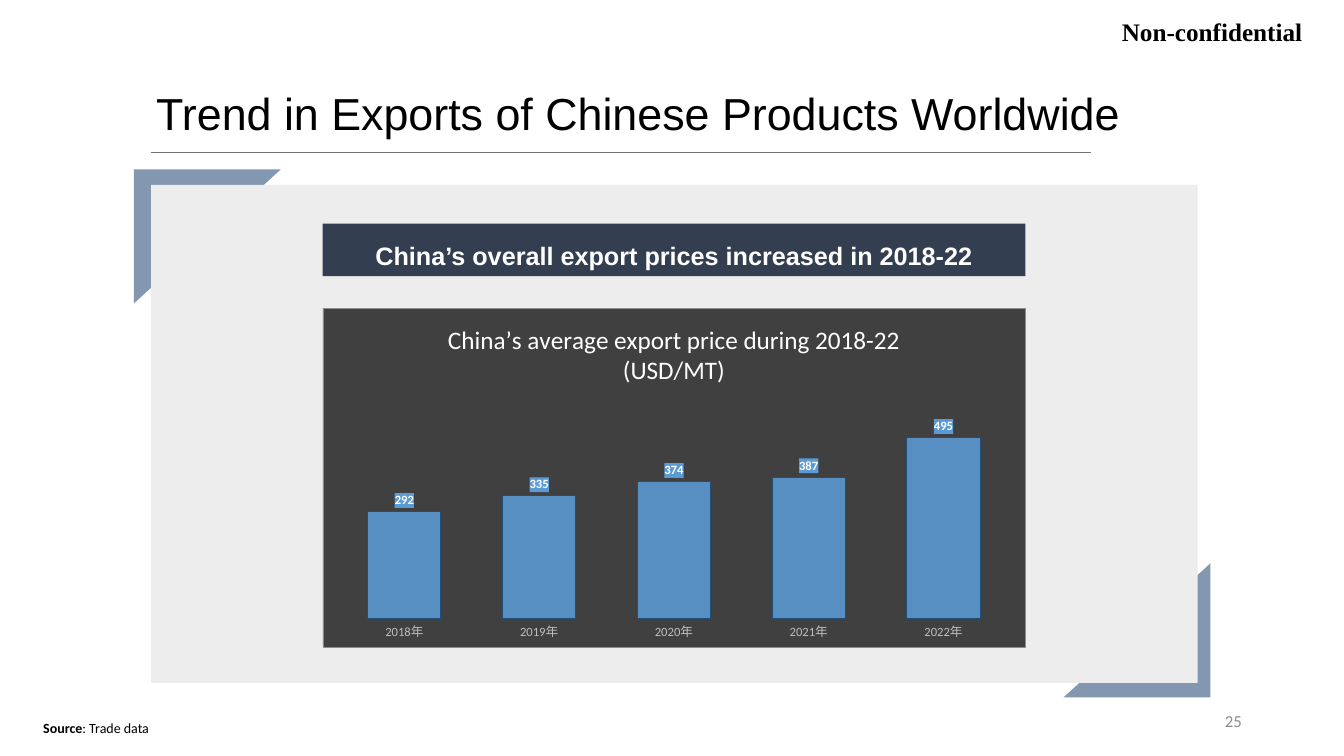
import pptx
import pptx.util
import pptx.chart.data
import pptx.dml.color
import pptx.enum.chart
import pptx.enum.shapes
import pptx.enum.text
import pptx.oxml
import pptx.oxml.ns
from lxml import etree

Pt = pptx.util.Pt
RGB = pptx.dml.color.RGBColor
Align = pptx.enum.text.PP_ALIGN
Anchor = pptx.enum.text.MSO_ANCHOR
Shape = pptx.enum.shapes.MSO_SHAPE
qn = pptx.oxml.ns.qn

BLACK = RGB(0x00, 0x00, 0x00)
WHITE = RGB(0xFF, 0xFF, 0xFF)
RULE = RGB(0x76, 0x71, 0x71)
FRAME = RGB(0x84, 0x97, 0xB0)
PANEL = RGB(0xED, 0xED, 0xED)
BANNER = RGB(0x33, 0x3F, 0x50)
CHART_BG = RGB(0x40, 0x40, 0x40)
GREY = RGB(0x8C, 0x8C, 0x8C)
AXIS_TEXT = RGB(0xBF, 0xBF, 0xBF)
BAR = RGB(0x5B, 0x9B, 0xD5)
BAR_LINE = RGB(0x1F, 0x4E, 0x79)


class SlideBuilder:
    """Holds the current slide and its style; all lengths are in points."""

    def __init__(self, prs):
        self.s = prs.slides.add_slide(prs.slide_layouts[5])

    def style(self, font, size, color, bold=False, name="Calibri"):
        font.name, font.size, font.bold = name, Pt(size), bold
        font.color.rgb = color

    def title(self, text, x, y, w, h, size, name):
        sp = self.s.shapes.title
        sp.left, sp.top, sp.width, sp.height = Pt(x), Pt(y), Pt(w), Pt(h)
        tf = sp.text_frame
        tf.text = text
        tf.auto_size = pptx.enum.text.MSO_AUTO_SIZE.NONE
        tf.vertical_anchor = Anchor.TOP
        p = tf.paragraphs[0]
        p.alignment = Align.LEFT
        self.style(p.font, size, BLACK, name=name)

    def text(self, text, x, y, w, h, size, color=BLACK, bold=False,
             name="Calibri", align=Align.LEFT, anchor=Anchor.TOP):
        sp = self.s.shapes.add_textbox(Pt(x), Pt(y), Pt(w), Pt(h))
        tf = sp.text_frame
        tf.word_wrap = True
        tf.vertical_anchor = anchor
        p = tf.paragraphs[0]
        p.alignment = align
        p.add_run().text = text
        self.style(p.font, size, color, bold, name)
        return p

    def shape(self, kind, x, y, w, h, fill, rotation=0):
        sp = self.s.shapes.add_shape(kind, Pt(x), Pt(y), Pt(w), Pt(h))
        sp.shadow.inherit = False
        sp.rotation = rotation
        sp.fill.solid()
        sp.fill.fore_color.rgb = fill
        sp.line.fill.background()

    def line(self, x1, y1, x2, y2, color, width):
        c = self.s.shapes.add_connector(
            pptx.enum.shapes.MSO_CONNECTOR.STRAIGHT, Pt(x1), Pt(y1), Pt(x2), Pt(y2))
        c.line.color.rgb = color
        c.line.width = Pt(width)
        etree.SubElement(c._element.spPr, qn("a:effectLst"))

    def column_chart(self, title_lines, cats, vals, x, y, w, h):
        data = pptx.chart.data.CategoryChartData()
        data.categories = cats
        data.add_series("Series 1", vals)
        chart = self.s.shapes.add_chart(
            pptx.enum.chart.XL_CHART_TYPE.COLUMN_CLUSTERED,
            Pt(x), Pt(y), Pt(w), Pt(h), data).chart
        self.style(chart.font, 10, BLACK)
        chart.has_legend = False

        # Chart title
        chart.has_title = True
        tf = chart.chart_title.text_frame
        tf.text = "\n".join(title_lines)
        for p in tf.paragraphs:
            self.style(p.font, 18, WHITE)
        chart.chart_title.include_in_layout = False

        # Axes
        cat, val = chart.category_axis, chart.value_axis
        cat.major_tick_mark = pptx.enum.chart.XL_TICK_MARK.NONE
        cat.format.line.fill.background()
        self.style(cat.tick_labels.font, 9, AXIS_TEXT)
        val.minimum_scale, val.maximum_scale = 0, 600
        val.has_major_gridlines = False
        val.visible = False

        # Columns and labels
        plot = chart.plots[0]
        plot.gap_width = 84
        plot.vary_by_categories = False
        fmt = plot.series[0].format
        fmt.fill.solid()
        fmt.fill.fore_color.rgb = BAR
        bar_color = fmt.fill._xPr.find(qn("a:solidFill"))[0]
        etree.SubElement(bar_color, qn("a:alpha")).set("val", "88000")
        fmt.line.color.rgb = BAR_LINE
        fmt.line.width = Pt(0.75)
        labels = plot.series[0].data_labels
        labels.show_value = True
        labels.position = pptx.enum.chart.XL_LABEL_POSITION.OUTSIDE_END
        self.style(labels.font, 9, WHITE, True)
        labels._element.find(qn("c:txPr")).addprevious(self.chart_box(BAR))

        # Plot position and chart background
        area = chart._chartSpace.chart.plotArea
        for old in area.findall(qn("c:layout")):
            area.remove(old)
        layout = etree.Element(qn("c:layout"))
        manual = etree.SubElement(layout, qn("c:manualLayout"))
        for tag, v in (("layoutTarget", "inner"), ("xMode", "edge"), ("yMode", "edge"),
                       ("x", "0.02"), ("y", "0.27"), ("w", "0.96"), ("h", "0.645")):
            etree.SubElement(manual, qn("c:" + tag)).set("val", v)
        area.insert(0, layout)
        chart._chartSpace.chart.addnext(self.chart_box(CHART_BG, GREY))

    def chart_box(self, fill, border=None):
        line = (f'<a:ln w="{Pt(0.5)}"><a:solidFill><a:srgbClr val="{border}"/>'
                '</a:solidFill></a:ln>') if border else ""
        return pptx.oxml.parse_xml(
            f'<c:spPr {pptx.oxml.ns.nsdecls("c", "a")}><a:solidFill>'
            f'<a:srgbClr val="{fill}"/></a:solidFill>{line}</c:spPr>')


def main():
    prs = pptx.Presentation()
    prs.slide_width, prs.slide_height = Pt(960), Pt(540)
    b = SlideBuilder(prs)

    # Heading
    b.title("Trend in Exports of Chinese Products Worldwide",
            104.4, 57.6, 714.2, 46, 32, "Arial")
    b.line(108, 108.9, 779, 108.9, RULE, 0.5)
    b.text("Non-confidential", 794.2, 8, 155.5, 29, 18, bold=True,
           name="Times New Roman")

    # Panel with corner frames
    b.shape(Shape.HALF_FRAME, 95.6, 121, 105, 95.8, FRAME)
    b.shape(Shape.HALF_FRAME, 759.6, 402.4, 105, 95.8, FRAME, 180)
    b.shape(Shape.RECTANGLE, 108, 132, 747.4, 355.8, PANEL)

    # Banner
    b.shape(Shape.RECTANGLE, 230.4, 159.8, 502, 37.4, BANNER)
    b.text("China’s overall export prices increased in 2018-22",
           230.4, 167.8, 502, 29, 18, WHITE, True, "Arial", Align.CENTER)

    # Price chart
    b.column_chart(["China’s average export price during 2018-22", "(USD/MT)"],
                   [f"{year}年" for year in range(2018, 2023)],
                   [292, 335, 374, 387, 495], 230.4, 219.8, 502, 242.6)

    # Footer
    p = b.text("Source", 23.8, 510.5, 491.8, 19.4, 10)
    p.runs[0].font.bold = True
    p.add_run().text = ": Trade data"
    b.text("25", 678.2, 500.4, 216, 28.8, 12, GREY, align=Align.RIGHT,
           anchor=Anchor.MIDDLE)

    prs.save("out.pptx")


if __name__ == "__main__":
    main()
